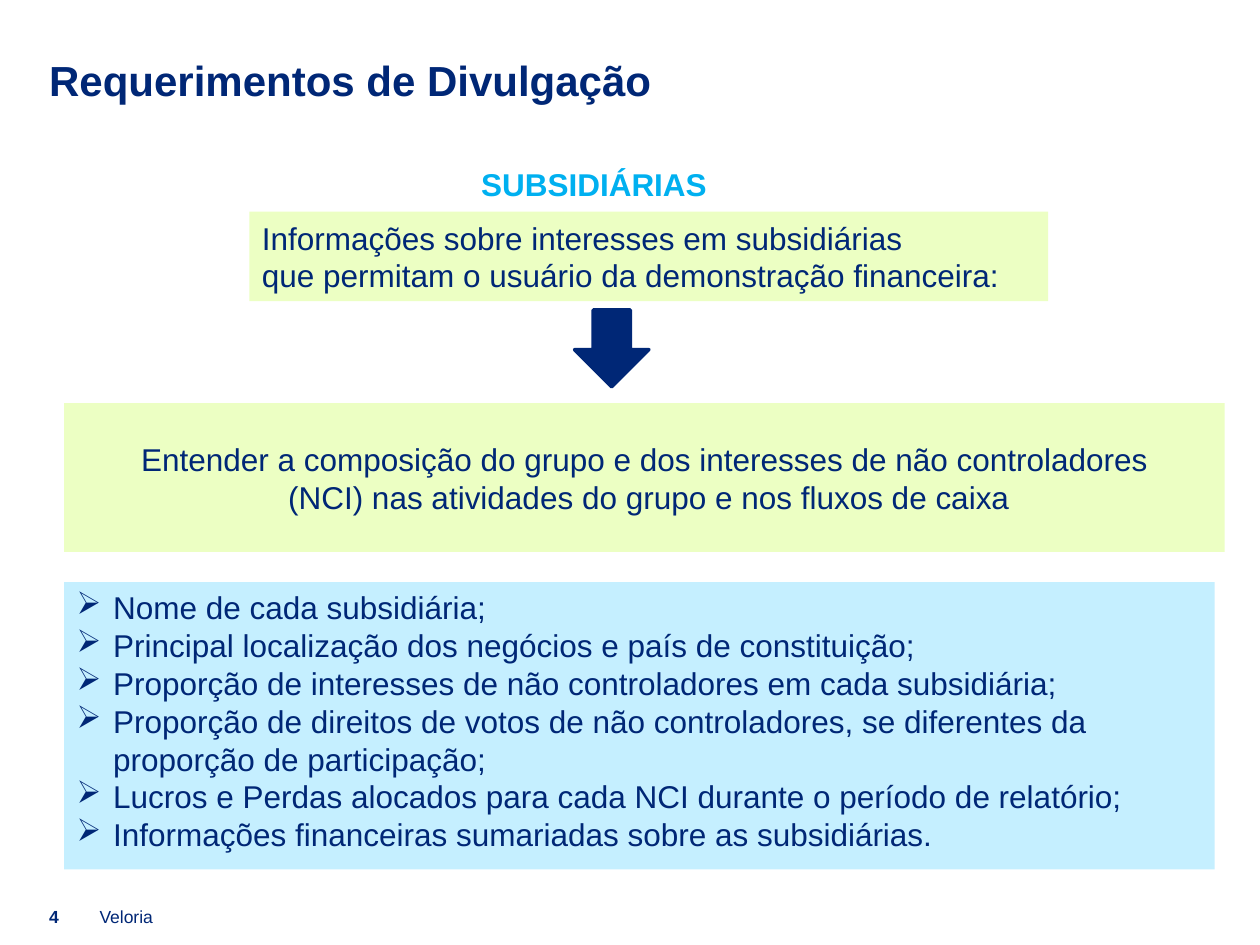
from dataclasses import dataclass

from lxml import etree
from pptx import Presentation
from pptx.dml.color import RGBColor
from pptx.enum.shapes import MSO_SHAPE
from pptx.enum.text import MSO_ANCHOR, PP_ALIGN
from pptx.oxml.ns import qn
from pptx.util import Inches, Pt

RECT, DOWN_ARROW = MSO_SHAPE.RECTANGLE, MSO_SHAPE.DOWN_ARROW
TOP, MIDDLE, BOTTOM = MSO_ANCHOR.TOP, MSO_ANCHOR.MIDDLE, MSO_ANCHOR.BOTTOM
LEFT, CENTER, JUSTIFY = PP_ALIGN.LEFT, PP_ALIGN.CENTER, PP_ALIGN.JUSTIFY


@dataclass(frozen=True)
class Theme:
    font: str = "Arial"
    navy: str = "002776"
    cyan: str = "00B0F0"
    lime: str = "ECFFC3"
    sky: str = "C5EFFF"
    title: int = 24
    body: int = 18
    footer: int = 10


class Deck:
    COLS, ROWS = 100, 75
    NO_MARGINS = dict.fromkeys(
        ("margin_left", "margin_top", "margin_right", "margin_bottom"), 0)

    def __init__(self, theme):
        self.theme = theme
        self.prs = Presentation()
        self.prs.slide_width, self.prs.slide_height = Inches(10), Inches(7.5)
        self.s = None

    def add_slide(self):
        self.s = self.prs.slides.add_slide(self.prs.slide_layouts[6])

    def place(self, col, row, cols, rows):
        w = self.prs.slide_width / self.COLS
        h = self.prs.slide_height / self.ROWS
        return [round(v) for v in (col * w, row * h, cols * w, rows * h)]

    def set_text(self, sp, lines, size, color=None, bold=False, align=LEFT,
                 bullet=None, **frame):
        tf = sp.text_frame
        for name, value in {"word_wrap": True, **frame}.items():
            setattr(tf, name, value)
        font = {"name": self.theme.font, "size": Pt(size), "bold": bold}
        for i, line in enumerate(lines):
            p = tf.add_paragraph() if i else tf.paragraphs[0]
            p.alignment = align
            if bullet:
                self.add_bullet(p, bullet)
            r = p.add_run()
            r.text = line
            for name, value in font.items():
                setattr(r.font, name, value)
            r.font.color.rgb = RGBColor.from_string(color or self.theme.navy)

    def add_bullet(self, p, char):
        indent = Inches(0.29)
        pPr = p._p.get_or_add_pPr()
        pPr.set("marL", str(indent))
        pPr.set("indent", str(-indent))
        etree.SubElement(pPr, qn("a:buChar")).set("char", char)

    def label(self, box, text, size, **style):
        sp = self.s.shapes.add_textbox(*self.place(*box))
        self.set_text(sp, [text], size, **style)

    def shape(self, kind, box, fill):
        sp = self.s.shapes.add_shape(kind, *self.place(*box))
        sp.shadow.inherit = False
        sp.fill.solid()
        sp.fill.fore_color.rgb = RGBColor.from_string(fill)
        sp.line.fill.background()
        return sp

    def panel(self, box, fill, lines, **style):
        sp = self.shape(RECT, box, fill)
        self.set_text(sp, lines, self.theme.body, **style)

    def arrow(self, box, color):
        sp = self.shape(DOWN_ARROW, box, color)
        sp.line.color.rgb = RGBColor.from_string(color)
        sp.line.width = Pt(2)


def main():
    t = Theme()
    deck = Deck(t)
    deck.add_slide()

    deck.label((3.9, 4.3, 92.1, 4), "Requerimentos de Divulgação", t.title,
               bold=True, **deck.NO_MARGINS)
    footer = {"vertical_anchor": BOTTOM, **deck.NO_MARGINS}
    deck.label((7.9, 72.2, 40.2, 1.4), "Veloria", t.footer,
               word_wrap=False, **footer)
    deck.label((3.9, 72.2, 3.9, 1.4), "4", t.footer, bold=True, **footer)

    deck.panel((5.1, 46.2, 91.3, 22.8), t.sky, [
        "Nome de cada subsidiária;",
        "Principal localização dos negócios e país de constituição;",
        "Proporção de interesses de não controladores em cada subsidiária;",
        "Proporção de direitos de votos de não controladores, se diferentes "
        "da proporção de participação;",
        "Lucros e Perdas alocados para cada NCI durante o período de relatório;",
        "Informações financeiras sumariadas sobre as subsidiárias.",
    ], bullet="➢", vertical_anchor=TOP)
    deck.panel((5.1, 32, 92.1, 11.8), t.lime, [
        "Entender a composição do grupo e dos interesses de não controladores",
        " (NCI) nas atividades do grupo e nos fluxos de caixa",
    ], align=CENTER, vertical_anchor=MIDDLE)
    deck.label((37.2, 12.6, 21.1, 4), "SUBSIDIÁRIAS", t.body, color=t.cyan,
               bold=True, align=JUSTIFY, vertical_anchor=MIDDLE)
    deck.panel((19.8, 16.8, 63.4, 7.1), t.lime, [
        "Informações sobre interesses em subsidiárias ",
        "que permitam o usuário da demonstração financeira: ",
    ], align=JUSTIFY, vertical_anchor=MIDDLE)
    deck.arrow((45.6, 24.6, 5.9, 6.1), t.navy)

    deck.prs.save("out.pptx")


if __name__ == "__main__":
    main()
